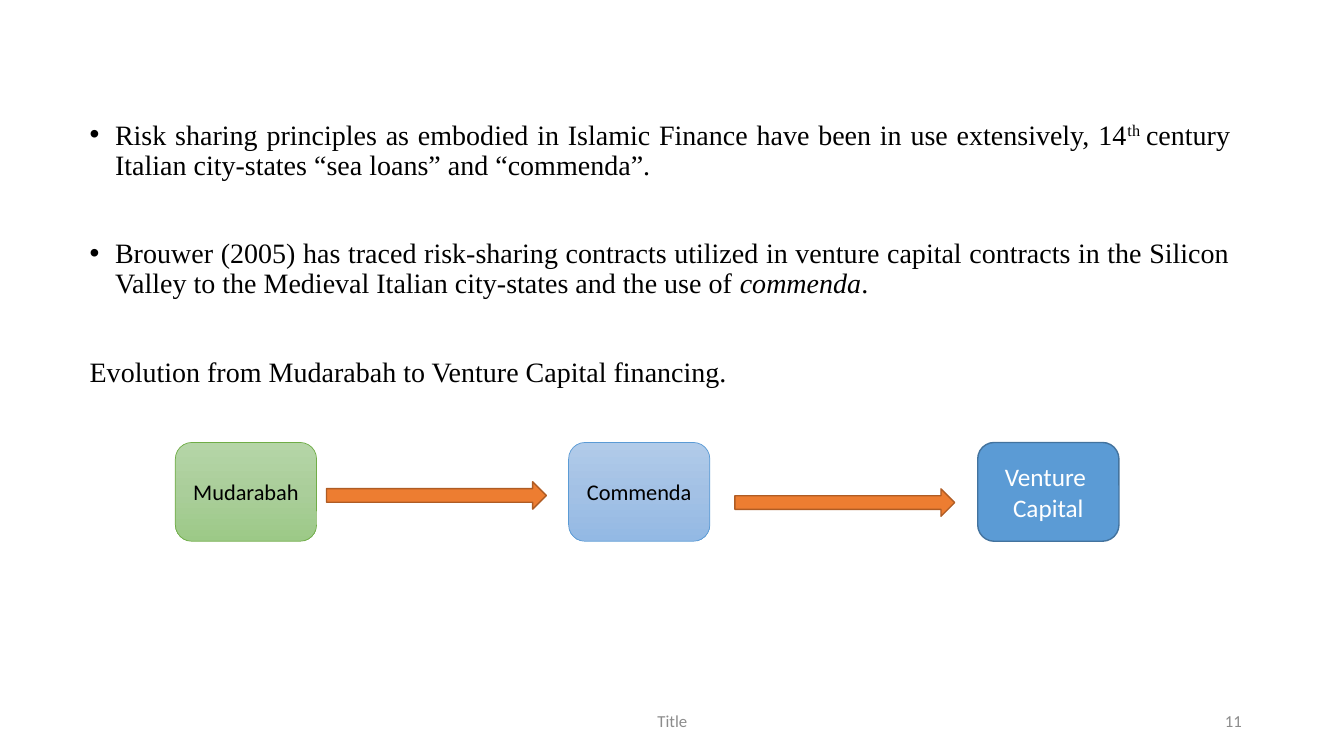
from copy import deepcopy

from lxml import etree
from pptx import Presentation
from pptx.dml.color import RGBColor
from pptx.enum.shapes import MSO_SHAPE
from pptx.enum.text import MSO_ANCHOR, PP_ALIGN
from pptx.oxml.ns import qn
from pptx.util import Cm, Pt

ROUND, ARROW = MSO_SHAPE.ROUNDED_RECTANGLE, MSO_SHAPE.RIGHT_ARROW
TOP, MIDDLE = MSO_ANCHOR.TOP, MSO_ANCHOR.MIDDLE
CENTER, RIGHT, JUSTIFY = PP_ALIGN.CENTER, PP_ALIGN.RIGHT, PP_ALIGN.JUSTIFY

COLORS = {
    "black": "000000", "white": "FFFFFF", "gray": "8C8C8C",
    "green": "70AD47", "blue": "5B9BD5", "navy": "43739E",
    "orange": "ED7D31", "rust": "AF5C24",
}
GREENS = ["B5D5A7", "AACE9A", "9CC987"]
BLUES = ["B1CBE9", "A3C1E5", "93B9E4"]
SANS, SERIF = "Calibri", "Times New Roman"


class Deck:
    def __init__(self):
        self.prs = Presentation()
        self.prs.slide_width, self.prs.slide_height = Cm(33.87), Cm(19.05)
        self.slide = self.prs.slides.add_slide(self.prs.slide_layouts[6])

    def color(self, name):
        return RGBColor.from_string(COLORS[name])

    def run(self, para, text, size, color, font=SANS, italic=False, raised=False):
        run = para.add_run()
        run.text = text
        run.font.size, run.font.name = Pt(size), font
        run.font.color.rgb = self.color(color)
        if italic:
            run.font.italic = True
        if raised:
            run._r.get_or_add_rPr().set("baseline", "30000")

    def frame(self, left, top, width, height, anchor):
        box = self.slide.shapes.add_textbox(Cm(left), Cm(top), Cm(width), Cm(height))
        box.text_frame.word_wrap = True
        box.text_frame.vertical_anchor = anchor
        return box.text_frame

    def footer(self, left, width, text, align):
        para = self.frame(left, 17.65, width, 1.02, MIDDLE).paragraphs[0]
        para.alignment = align
        self.run(para, text, 12, "gray")

    def body(self, left, top, width, height, items):
        """Items are (has bullet, runs); a run is (text, style options)."""
        frame = self.frame(left, top, width, height, TOP)
        for i, (bullet, runs) in enumerate(items):
            para = frame.add_paragraph() if i else frame.paragraphs[0]
            para.alignment, para.line_spacing = JUSTIFY, 0.9
            para.space_before = Pt(41.5 if i else 10)
            if bullet:
                self.bullet(para)
            for text, style in runs:
                self.run(para, text, 20, "black", SERIF, **style)

    def bullet(self, para):
        props = para._p.get_or_add_pPr()
        props.set("marL", str(Cm(0.64)))
        props.set("indent", str(-Cm(0.64)))
        etree.SubElement(props, qn("a:buFont")).set("typeface", "Arial")
        etree.SubElement(props, qn("a:buChar")).set("char", "•")

    def shape(self, kind, left, top, width, height, line, weight):
        shape = self.slide.shapes.add_shape(
            kind, Cm(left), Cm(top), Cm(width), Cm(height))
        shape.shadow.inherit = False
        shape.line.color.rgb = self.color(line)
        shape.line.width = Pt(weight)
        return shape

    def solid(self, shape, color):
        shape.fill.solid()
        shape.fill.fore_color.rgb = self.color(color)

    def fade(self, shape, shades):
        """Fill from top to bottom with evenly spaced shades."""
        shape.fill.gradient()
        shape.fill.gradient_angle = 270
        stops = shape._element.spPr.find(qn("a:gradFill")).find(qn("a:gsLst"))
        while len(stops) < len(shades):
            stops.append(deepcopy(stops[0]))
        for i, (stop, shade) in enumerate(zip(shape.fill.gradient_stops, shades)):
            stop.position = i / (len(shades) - 1)
            stop.color.rgb = RGBColor.from_string(shade)

    def stage(self, left, lines, size, color, line, weight, shades=None):
        shape = self.shape(ROUND, left, 11.15, 3.56, 2.49, line, weight)
        if shades:
            self.fade(shape, shades)
        else:
            self.solid(shape, "blue")
        frame = shape.text_frame
        frame.word_wrap, frame.vertical_anchor = True, MIDDLE
        for i, text in enumerate(lines):
            para = frame.add_paragraph() if i else frame.paragraphs[0]
            para.alignment = CENTER
            self.run(para, text, size, color)

    def arrow(self, left, top):
        self.solid(self.shape(ARROW, left, top, 5.54, 0.69, "rust", 1), "orange")


def main():
    deck = Deck()
    deck.footer(11.23, 11.43, "Title", CENTER)
    deck.body(2.01, 2.92, 29.24, 14.1, [
        (True, [
            ("Risk sharing principles as embodied in Islamic Finance have been "
             "in use extensively, 14", {}),
            ("th ", {"raised": True}),
            ("century Italian city-states “sea loans” and “commenda”. ", {}),
        ]),
        (True, [
            ("Brouwer (2005) has traced risk-sharing contracts utilized in "
             "venture capital contracts in the Silicon Valley to the Medieval "
             "Italian city-states and the use of ", {}),
            ("commenda", {"italic": True}),
            (".", {}),
        ]),
        (False, [("Evolution from Mudarabah to Venture Capital financing.", {})]),
    ])
    deck.footer(23.93, 7.62, "11", RIGHT)
    deck.stage(4.42, ["Mudarabah"], 16, "black", "green", 0.5, GREENS)
    deck.stage(14.33, ["Commenda"], 16, "black", "blue", 0.5, BLUES)
    deck.stage(24.64, ["Venture ", "Capital"], 18, "white", "navy", 1)
    deck.arrow(8.23, 12.14)
    deck.arrow(18.52, 12.32)
    deck.prs.save("out.pptx")


if __name__ == "__main__":
    main()
